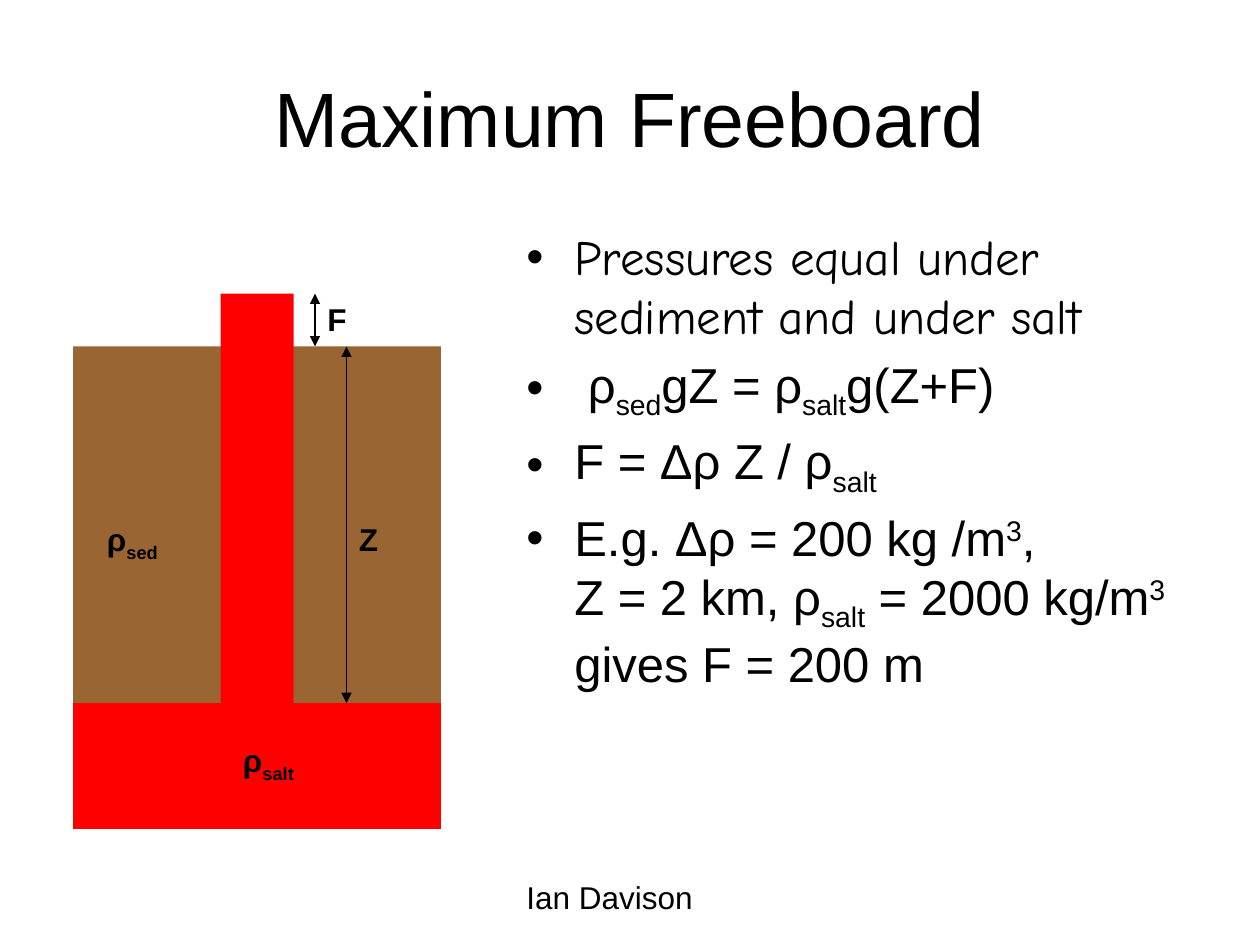
from dataclasses import dataclass

from lxml.etree import SubElement
from pptx import Presentation
from pptx.dml.color import RGBColor
from pptx.enum.shapes import MSO_CONNECTOR, MSO_SHAPE
from pptx.enum.text import MSO_ANCHOR, PP_ALIGN
from pptx.oxml.ns import qn
from pptx.util import Inches, Pt


@dataclass(frozen=True)
class Theme:
    ink: RGBColor = RGBColor(0, 0, 0)
    salt: RGBColor = RGBColor(255, 0, 0)
    sediment: RGBColor = RGBColor(153, 102, 51)
    font: str = "Arial"
    lead_font: str = "Comic Neue"
    title_size: int = 44
    body_size: int = 28
    label_size: int = 18
    line_width: float = 0.75
    bullet_indent: float = 0.38


SUB, SUPER = -25000, 30000


class SlideBuilder:
    def __init__(self, page, theme):
        self.page = page
        self.theme = theme

    def add_spans(self, para, spans, **formats):
        """Fill a paragraph from plain strings and (string, baseline) pairs."""
        values = {"name": self.theme.font, **formats}
        for item in spans:
            text, baseline = (item, 0) if isinstance(item, str) else item
            if text == "\n":
                para.add_line_break()
                continue
            span = para.add_run()
            span.text = text
            for name, value in values.items():
                setattr(span.font, name, value)
            span.font.color.rgb = self.theme.ink
            if baseline:
                span.font._element.set("baseline", str(baseline))

    def text_box(self, left, top, width, height, **frame_formats):
        box = self.page.shapes.add_textbox(
            Inches(left), Inches(top), Inches(width), Inches(height))
        for name, value in {"word_wrap": True, **frame_formats}.items():
            setattr(box.text_frame, name, value)
        return box.text_frame

    def title(self, text, *place):
        frame = self.text_box(*place, vertical_anchor=MSO_ANCHOR.MIDDLE)
        para = frame.paragraphs[0]
        para.alignment = PP_ALIGN.CENTER
        self.add_spans(para, [text], size=Pt(self.theme.title_size))

    def bullets(self, items, *place):
        frame = self.text_box(*place)
        size = self.theme.body_size
        indent = Inches(self.theme.bullet_indent)
        for index, (font, spans) in enumerate(items):
            para = frame.add_paragraph() if index else frame.paragraphs[0]
            properties = para._p.get_or_add_pPr()
            properties.set("marL", str(indent))
            properties.set("indent", str(-indent))
            if index:
                para.space_before = Pt(size * 0.2)
            SubElement(properties, qn("a:buFont"), typeface=self.theme.font)
            SubElement(properties, qn("a:buChar"), char="•")
            self.add_spans(para, spans, name=font, size=Pt(size))

    def label(self, spans, *place, bold=True, wrap=False):
        frame = self.text_box(*place, word_wrap=wrap)
        self.add_spans(frame.paragraphs[0], spans, bold=bold,
                       size=Pt(self.theme.label_size))

    def block(self, color, left, top, width, height):
        shape = self.page.shapes.add_shape(
            MSO_SHAPE.RECTANGLE, Inches(left), Inches(top),
            Inches(width), Inches(height))
        shape.shadow.inherit = False
        shape.fill.solid()
        shape.fill.fore_color.rgb = color
        shape.line.fill.background()

    def height_arrow(self, x, top, bottom):
        arrow = self.page.shapes.add_connector(
            MSO_CONNECTOR.STRAIGHT, Inches(x), Inches(top),
            Inches(x), Inches(bottom))
        arrow.line.color.rgb = self.theme.ink
        arrow.line.width = Pt(self.theme.line_width)
        line = arrow.line._get_or_add_ln()
        for end in ("a:headEnd", "a:tailEnd"):
            SubElement(line, qn(end), type="triangle")
        SubElement(arrow._element.spPr, qn("a:effectLst"))


def main():
    deck = Presentation()
    deck.slide_width, deck.slide_height = Inches(10), Inches(7.5)
    theme = Theme()
    slide = SlideBuilder(deck.slides.add_slide(deck.slide_layouts[6]), theme)

    slide.title("Maximum Freeboard", 0.5, 0.3, 9, 1.25)
    salt = ("salt", SUB)
    cubed = ("3", SUPER)
    slide.bullets([
        (theme.lead_font, ["Pressures equal under sediment and under salt"]),
        (theme.font, [" ρ", ("sed", SUB), "gZ = ρ", salt, "g(Z+F)"]),
        (theme.font, ["F = Δρ Z / ρ", salt]),
        (theme.font, ["E.g. Δρ = 200 kg /m", cubed, ",", "\n",
                      "Z = 2 km, ρ", salt, " = 2000 kg/m", cubed,
                      " gives F = 200 m"]),
    ], 4.08, 1.75, 5.42, 4.95)

    # Levels of the cross-section, from the top of the salt column down
    column_top, surface, salt_top = 2.33, 2.75, 5.58
    left, width = 0.58, 2.92
    slide.block(theme.sediment, left, surface, width, 3.33)
    slide.block(theme.salt, left, salt_top, width, 1)
    slide.block(theme.salt, 1.75, column_top, 0.58, salt_top - column_top)

    for name, x, label_top, top, bottom in (
            ("Z", 2.75, 4.08, surface, salt_top),
            ("F", 2.5, column_top, column_top, surface)):
        slide.label([name], x, label_top, 0.35, 0.4)
        slide.height_arrow(x, top, bottom)
    for name, x, top in (("sed", 0.75, 4.08), ("salt", 1.83, 5.83)):
        slide.label(["ρ", (name, SUB)], x, top, 0.62, 0.4)
    slide.label(["Ian Davison"], 4.08, 6.92, 4.67, 0.4, bold=False, wrap=True)

    deck.save("out.pptx")


if __name__ == "__main__":
    main()
